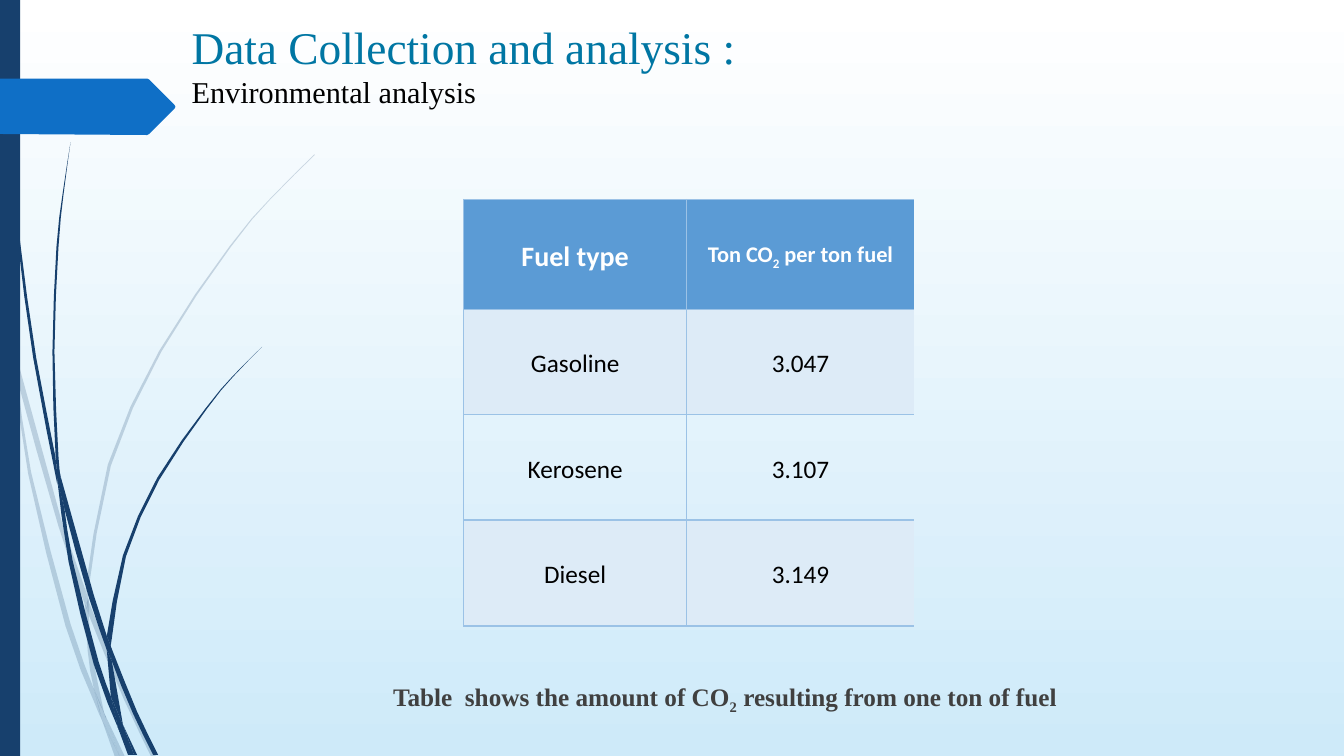
from lxml.etree import SubElement as Sub
from pptx import Presentation
from pptx.dml.color import RGBColor as RGB
from pptx.enum.shapes import MSO_SHAPE as Kind
from pptx.enum.text import MSO_ANCHOR as Anchor, MSO_AUTO_SIZE as Auto, PP_ALIGN as Align
from pptx.oxml import parse_xml as to_xml
from pptx.oxml.ns import nsdecls, qn
from pptx.util import Inches, Pt

WHITE = RGB(0xFF, 0xFF, 0xFF)
BLACK = RGB(0, 0, 0)
SKY = RGB(0xCE, 0xEA, 0xF9)
NAVY = RGB(0x17, 0x40, 0x6D)
BLUE = RGB(0x0F, 0x6F, 0xC6)
TEAL = RGB(0x00, 0x76, 0xA3)
GREY = RGB(0x40, 0x40, 0x40)
HEAD = RGB(0x5B, 0x9B, 0xD5)
BAND = RGB(0xDD, 0xEB, 0xF7)
EDGE = RGB(0x9B, 0xC2, 0xE6)
SERIF = "Times New Roman"
SANS = "Calibri"

FAINT = [
    ([(0, 2.99), (.1, 3.44), (.11, 3.5)], [(0, 2.82), (.09, 3.22), (.11, 3.5)]),
    ([(.14, 3.45), (.17, 3.76), (.58, 5.22), (.84, 5.99)],
     [(.14, 3.45), (.62, 5.2), (.85, 5.86)]),
    ([(.88, 5.96), (.88, 6.1), (1.23, 6.94), (1.5, 7.51)],
     [(.88, 5.96), (.92, 6.07), (1.27, 6.92), (1.55, 7.51)]),
    ([(1.05, 7.11), (1.19, 7.51)], [(1.05, 7.11), (1.24, 7.51)]),
    ([(.11, 3.5), (.28, 4.7), (.65, 6.21), (.92, 6.93), (1.01, 7.14)],
     [(.11, 3.5), (.17, 3.76), (.31, 4.69), (.7, 6.19), (.93, 6.83), (1.01, 7.14)]),
    ([(.84, 5.99), (.87, 6.46), (.93, 6.83), (1.05, 7.11)],
     [(.84, 5.99), (.88, 6.1), (.91, 6.46), (1.03, 7.06), (1.05, 7.11)]),
    ([(3.12, 1.53), (2.68, 1.97), (2.28, 2.44), (1.58, 3.48), (1.07, 4.61), (.85, 5.84)],
     [(3.12, 1.54), (2.68, 1.98), (2.29, 2.45), (1.6, 3.49), (1.1, 4.62), (.88, 5.84),
      (.88, 5.96)]),
    ([(1.01, 7.14), (1.14, 7.51)], [(1.01, 7.14), (1.19, 7.51)]),
    ([(.85, 5.86), (.84, 5.99), (.88, 6.1)], [(.85, 5.86), (.88, 5.96), (.88, 6.1)]),
    ([(.93, 6.83), (1.01, 7.14), (1.19, 7.51)], [(.93, 6.83), (1.05, 7.11), (1.19, 7.51)]),
]
DARK = [
    ([(.03, 0), (.07, 1.1), (.17, 2.33), (.33, 3.55), (.57, 4.81)],
     [(.04, 0), (.08, 1.09), (.19, 2.32), (.36, 3.55), (.55, 4.53), (.57, 4.81)]),
    ([(.6, 4.72), (.64, 5.05), (.88, 5.92), (1.06, 6.45)],
     [(.6, 4.72), (.93, 5.9), (1.06, 6.31)]),
    ([(1.1, 6.41), (1.11, 6.56), (1.32, 7.08), (1.52, 7.49)],
     [(1.1, 6.41), (1.13, 6.49), (1.36, 7.06), (1.57, 7.49)]),
    ([(.57, 4.77), (.68, 5.57), (.93, 6.59), (1.17, 7.22)],
     [(.57, 4.77), (.64, 5.05), (.72, 5.56), (.98, 6.57), (1.1, 6.91), (1.17, 7.22)]),
    ([(.7, 1.41), (.62, 1.93), (.56, 2.45), (.52, 3.49), (.55, 4.49), (.6, 4.72)],
     [(.7, 1.41), (.63, 1.93), (.58, 2.45), (.54, 3.49), (.58, 4.53), (.6, 4.72)]),
    ([(1.22, 7.19), (1.33, 7.49)], [(1.22, 7.19), (1.36, 7.49)]),
    ([(.55, 4.49), (.57, 4.77), (.64, 5.05)], [(.55, 4.49), (.6, 4.72), (.64, 5.05)]),
    ([(2.6, 3.44), (2.31, 3.73), (2.04, 4.05), (1.56, 4.74), (1.22, 5.51), (1.06, 6.31)],
     [(2.6, 3.44), (2.31, 3.74), (2.05, 4.06), (1.58, 4.76), (1.25, 5.52), (1.11, 6.33),
      (1.1, 6.41)]),
    ([(1.17, 7.22), (1.27, 7.49)], [(1.17, 7.22), (1.31, 7.49)]),
    ([(1.06, 6.45), (1.1, 6.91), (1.22, 7.19)], [(1.06, 6.45), (1.11, 6.56), (1.22, 7.19)]),
    ([(1.06, 6.31), (1.06, 6.45), (1.11, 6.56)], [(1.06, 6.31), (1.1, 6.41), (1.11, 6.56)]),
    ([(1.1, 6.91), (1.17, 7.22), (1.3, 7.49)], [(1.1, 6.91), (1.22, 7.19), (1.33, 7.49)]),
]
ARROW = [(0, .78), (1.46, .78), (1.48, .79), (1.73, 1.04), (1.74, 1.06),
         (1.73, 1.08), (1.48, 1.33), (1.46, 1.34), (0, 1.33)]
FUELS = [("Gasoline", "3.047"), ("Kerosene", "3.107"), ("Diesel", "3.149")]


def curve(knots):
    ends = [knots[0], *knots, knots[-1]]
    dots = []
    for a, b, c, d in zip(ends, ends[1:], ends[2:], ends[3:]):
        mid = tuple((9 * (q + r) - p - s) / 16 for p, q, r, s in zip(a, b, c, d))
        dots += [b, mid] if len(knots) > 3 else [b]
    return dots + [knots[-1]]


def paint(shape, color, alpha=100):
    shape.shadow.inherit = False
    shape.fill.solid()
    shape.fill.fore_color.rgb = color
    shape.line.fill.background()
    if alpha < 100:
        tint = next(shape._element.spPr.iter(qn("a:srgbClr")))
        Sub(tint, qn("a:alpha")).set("val", str(alpha * 1000))


def outline(home, dots, color, alpha=100):
    first, *rest = [(Inches(x), Inches(y)) for x, y in dots]
    pen = home.shapes.build_freeform(*first)
    pen.add_line_segments(rest)
    paint(pen.convert_to_shape(), color, alpha)


def stems(slide, pairs, alpha):
    group = slide.shapes.add_group_shape()
    for left, right in pairs:
        outline(group, curve(left) + curve(right)[::-1], NAVY, alpha)


def style(run, size, color, face, bold=False):
    font = run.font
    font.size, font.name, font.bold = Pt(size), face, bold
    font.color.rgb = color


def lower(par, parts):
    for text in parts:
        par.add_run().text = text
    par.runs[1]._r.get_or_add_rPr().set("baseline", "-25000")


def place(shape, left, top, width, height):
    shape.left, shape.top = Inches(left), Inches(top)
    shape.width, shape.height = Inches(width), Inches(height)
    frame = shape.text_frame
    frame.auto_size, frame.word_wrap = Auto.NONE, True
    return frame


def title(slide):
    frame = place(slide.shapes.title, 1.8, .14, 9.75, 1.3)
    frame.vertical_anchor = Anchor.TOP
    frame.margin_top = Inches(.05)
    par = frame.paragraphs[0]
    par.text = "Data Collection and analysis :\vEnvironmental analysis"
    par.alignment = Align.LEFT
    style(par.runs[0], 32.4, TEAL, SERIF)
    style(par.runs[1], 21.6, BLACK, SERIF)


def caption(slide):
    frame = place(slide.placeholders[1], 1.8, 1.44, 10.78, 5.8)
    frame.vertical_anchor = Anchor.BOTTOM
    frame.margin_bottom = Inches(.14)
    par = frame.paragraphs[0]
    lower(par, ["Table  shows the amount of CO", "2", " resulting from one ton of fuel"])
    par.alignment = Align.CENTER
    for run in par.runs:
        style(run, 18, GREY, SERIF, True)
    props = par._p.get_or_add_pPr()
    props.set("marL", "0")
    props.set("indent", "0")
    Sub(props, qn("a:buNone"))


def border(cell, sides):
    props = cell._tc.get_or_add_tcPr()
    for i, side in enumerate("LRTB"):
        fill = (f'<a:solidFill><a:srgbClr val="{EDGE}"/></a:solidFill>'
                if side in sides else "<a:noFill/>")
        props.insert(i, to_xml(f'<a:ln{side} {nsdecls("a")} w="12700">{fill}</a:ln{side}>'))


def finish(cell, row, col):
    cell.vertical_anchor = Anchor.MIDDLE
    cell.margin_left = cell.margin_right = Inches(.07)
    cell.margin_top = cell.margin_bottom = 0
    if row == 2:
        cell.fill.background()
    else:
        cell.fill.solid()
        cell.fill.fore_color.rgb = BAND if row else HEAD
    border(cell, "LTB" if col else "LRTB")
    par = cell.text_frame.paragraphs[0]
    par.alignment, par.line_spacing = Align.CENTER, 1.15
    for run in par.runs:
        style(run, 18 if row else (20, 16)[col], BLACK if row else WHITE, SANS, row == 0)


def table(slide):
    grid = slide.shapes.add_table(4, 2, Inches(4.6), Inches(1.98),
                                  Inches(4.47), Inches(4.23)).table
    grid.first_row = grid.horz_banding = False
    for col, width in zip(grid.columns, (2.21, 2.26)):
        col.width = Inches(width)
    for row, height in zip(grid.rows, (1.09, 1.04, 1.05, 1.05)):
        row.height = Inches(height)
    grid.cell(0, 0).text_frame.text = "Fuel type"
    lower(grid.cell(0, 1).text_frame.paragraphs[0], ["Ton CO", "2", " per ton fuel"])
    for i, fuel in enumerate(FUELS, 1):
        for j, text in enumerate(fuel):
            grid.cell(i, j).text_frame.text = text
    for i in range(4):
        for j in range(2):
            finish(grid.cell(i, j), i, j)


def ground(slide):
    fill = slide.background.fill
    fill.gradient()
    fill.gradient_angle = 270
    for stop, color, spot in zip(fill.gradient_stops, (WHITE, SKY), (0, 1)):
        stop.color.rgb, stop.position = color, spot


def main():
    deck = Presentation()
    deck.slide_width, deck.slide_height = Inches(13.33), Inches(7.5)
    slide = deck.slides.add_slide(deck.slide_layouts[1])
    ground(slide)
    stems(slide, FAINT, 20)
    stems(slide, DARK, 100)
    bar = slide.shapes.add_shape(Kind.RECTANGLE, 0, 0, Inches(.2), Inches(7.5))
    paint(bar, NAVY)
    outline(slide, ARROW, BLUE)
    title(slide)
    caption(slide)
    table(slide)
    deck.save("out.pptx")


if __name__ == "__main__":
    main()
